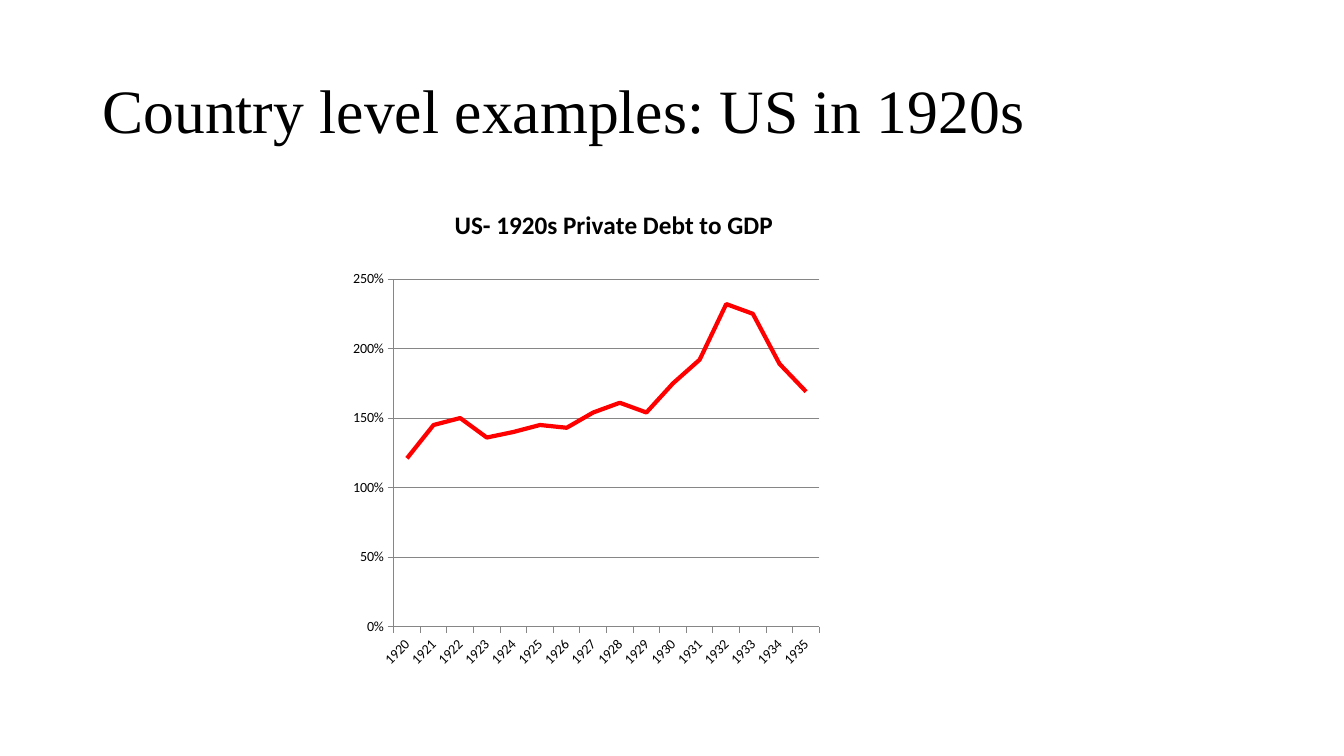
from lxml import etree
from pptx import Presentation
from pptx.chart.data import CategoryChartData
from pptx.dml.color import RGBColor
from pptx.enum.chart import XL_CHART_TYPE, XL_MARKER_STYLE, XL_TICK_MARK
from pptx.enum.text import MSO_ANCHOR, PP_ALIGN
from pptx.oxml.ns import qn
from pptx.util import Cm, Pt

LINE = XL_CHART_TYPE.LINE
PLAIN = XL_MARKER_STYLE.NONE
OUT, NONE = XL_TICK_MARK.OUTSIDE, XL_TICK_MARK.NONE
LEFT, MIDDLE = PP_ALIGN.LEFT, MSO_ANCHOR.MIDDLE

COLORS = {"text": "000000", "grid": "868686", "debt": "FF0000"}
DEBT = [1.21, 1.45, 1.5, 1.36, 1.4, 1.45, 1.43, 1.54,
        1.61, 1.54, 1.75, 1.92, 2.32, 2.25, 1.89, 1.69]
YEARS = [str(1920 + i) for i in range(len(DEBT))]
PLOT = {"x": 0.107, "y": 0.178, "w": 0.76, "h": 0.668}


def color(name):
    return RGBColor.from_string(COLORS[name])


def set_font(font, name, size, bold=False):
    font.name = name
    font.size = Pt(size)
    font.bold = bold
    font.color.rgb = color("text")


def set_line(line, name, width):
    line.color.rgb = color(name)
    line.width = Pt(width)


def add_title(slide, text):
    title = slide.shapes.title
    title.left, title.top = Cm(2.33), Cm(1.01)
    title.width, title.height = Cm(29.21), Cm(3.68)
    frame = title.text_frame
    frame.text = text
    frame.vertical_anchor = MIDDLE
    para = frame.paragraphs[0]
    para.alignment = LEFT
    para.line_spacing = 0.9
    set_font(para.runs[0].font, "Times New Roman", 44)


def place_plot(chart):
    # Fix the inner plot area as shares of the chart
    area = chart._chartSpace.chart.plotArea
    for old in area.findall(qn("c:layout")):
        area.remove(old)
    layout = etree.Element(qn("c:layout"))
    manual = etree.SubElement(layout, qn("c:manualLayout"))
    parts = {"layoutTarget": "inner", "xMode": "edge", "yMode": "edge", **PLOT}
    for tag, value in parts.items():
        etree.SubElement(manual, qn("c:" + tag)).set("val", str(value))
    area.insert(0, layout)


def style_axis(axis):
    axis.major_tick_mark = OUT
    axis.minor_tick_mark = NONE
    set_line(axis.format.line, "grid", 0.75)


def add_line(slide, name):
    data = CategoryChartData(number_format="0%")
    data.categories = YEARS
    data.add_series("Series 1", DEBT)
    chart = slide.shapes.add_chart(
        LINE, Cm(8.41), Cm(4.7), Cm(14.12), Cm(13.11), data).chart
    set_font(chart.font, "Calibri", 10)
    chart.has_legend = False

    # Chart title
    chart.has_title = True
    frame = chart.chart_title.text_frame
    frame.text = name
    set_font(frame.paragraphs[0].runs[0].font, "Calibri", 18, True)
    chart.chart_title.include_in_layout = False

    # Axes
    years, share = chart.category_axis, chart.value_axis
    style_axis(years)
    style_axis(share)
    years.tick_labels.font.size = Pt(10)
    years._element.txPr.bodyPr.set("rot", "-2700000")
    share.minimum_scale, share.maximum_scale = 0, 2.5
    share.major_unit = 0.5
    share.tick_labels.number_format = "0%"
    share.tick_labels.number_format_is_linked = False
    share.has_major_gridlines = True
    set_line(share.major_gridlines.format.line, "grid", 0.75)

    # Series
    chart.plots[0].vary_by_categories = False
    debt = chart.plots[0].series[0]
    debt.smooth = False
    debt.marker.style = PLAIN
    set_line(debt.format.line, "debt", 3)
    place_plot(chart)


def main():
    prs = Presentation()
    prs.slide_width, prs.slide_height = Cm(33.87), Cm(19.05)
    slide = prs.slides.add_slide(prs.slide_layouts[5])
    add_title(slide, "Country level examples: US in 1920s")
    add_line(slide, "US- 1920s Private Debt to GDP")
    prs.save("out.pptx")


if __name__ == "__main__":
    main()
